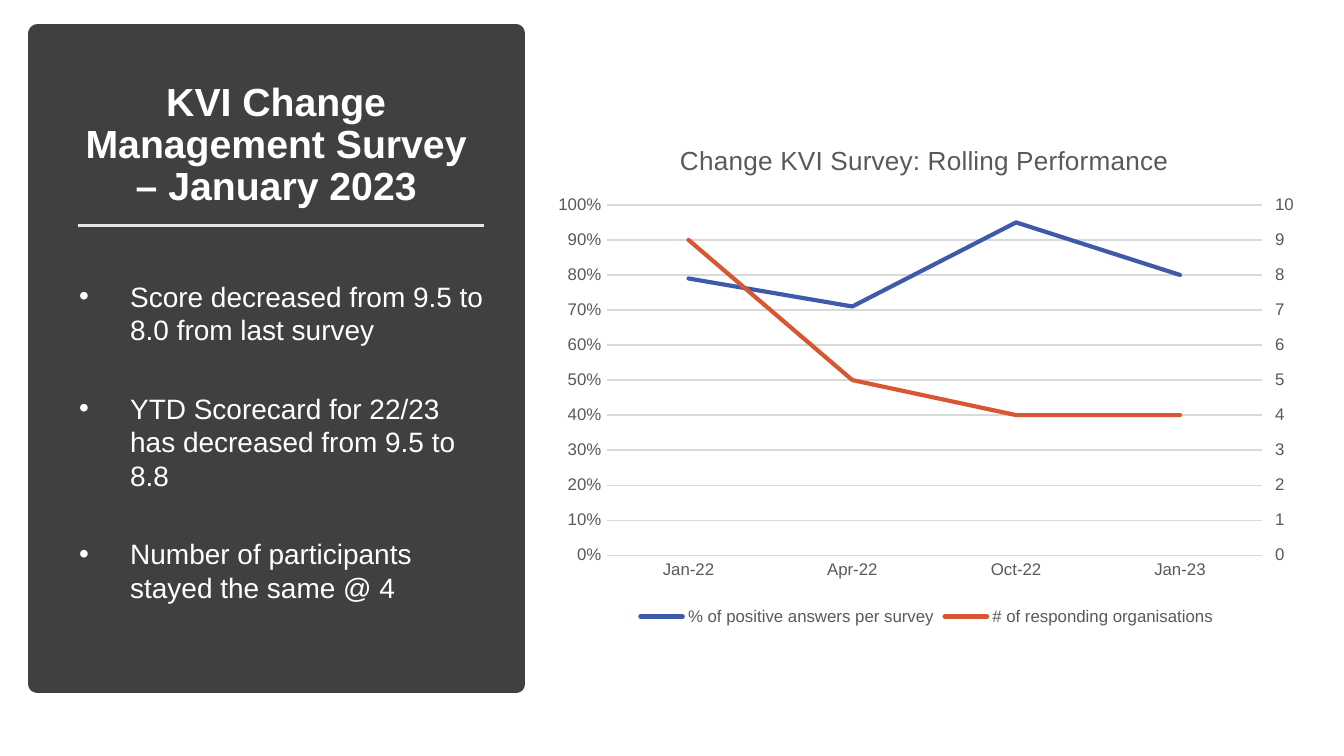
from copy import deepcopy
from lxml.etree import SubElement
from pptx import Presentation
from pptx.chart.data import CategoryChartData
from pptx.dml.color import RGBColor
from pptx.enum.chart import XL_CHART_TYPE as ChartType, XL_LEGEND_POSITION as LegendPos, XL_TICK_MARK as Tick
from pptx.enum.shapes import MSO_CONNECTOR as Connector, MSO_SHAPE as Shape
from pptx.enum.text import MSO_ANCHOR as Anchor, PP_ALIGN as Align
from pptx.oxml import parse_xml
from pptx.oxml.ns import nsdecls, qn
from pptx.util import Inches, Pt

# Content
TITLE = "KVI Change Management Survey – January 2023"
FINDINGS = [
    "Score decreased from 9.5 to 8.0 from last survey",
    "YTD Scorecard for 22/23 has decreased from 9.5 to 8.8",
    "Number of participants stayed the same @ 4",
]
CHART_TITLE = "Change KVI Survey: Rolling Performance"
SURVEYS = ["Jan-22", "Apr-22", "Oct-22", "Jan-23"]
SERIES = [
    ("% of positive answers per survey", [0.79, 0.71, 0.95, 0.8], "positive"),
    ("# of responding organisations", [9, 5, 4, 4], "organisations"),
]

# Style and layout (inches)
FONT = "Arial"
COLORS = {
    "panel": "404040", "light": "FFFFFF", "divider": "E7E6E6", "label": "595959",
    "grid": "D9D9D9", "positive": "3E5AA8", "organisations": "D75733",
}
PANEL = (0.28, 0.25, 3.56, 4.84)
TITLE_BOX = (0.49, 0.53, 3.13, 1.1)
DIVIDER = (0.58, 1.68, 3.6, 1.68)
FINDINGS_BOX = (0.49, 2.03, 3.22, 2.8)
CHART_BOX = (4.06, 0.92, 5.67, 3.78)
BULLET_INDENT = Inches(0.38)


def inches(lengths):
    return [Inches(length) for length in lengths]


def color(name):
    return RGBColor.from_string(COLORS[name])


def set_font(font, size, name, bold=False):
    font.name, font.size, font.bold = FONT, Pt(size), bold
    font.color.rgb = color(name)


def set_line(line, name, width):
    line.color.rgb = color(name)
    line.width = Pt(width)


def set_layout(parent, position, x, y, width=None, height=None, inner=False):
    """Place a chart part by shares of the chart's size."""
    for old in parent.findall(qn("c:layout")):
        parent.remove(old)
    layout = parse_xml(f"<c:layout {nsdecls('c')}/>")
    manual = SubElement(layout, qn("c:manualLayout"))
    entries = [("xMode", "edge"), ("yMode", "edge"), ("x", x), ("y", y), ("w", width), ("h", height)]
    if inner:
        entries.insert(0, ("layoutTarget", "inner"))
    for tag, value in entries:
        if value is not None:
            SubElement(manual, qn(f"c:{tag}")).set("val", str(value))
    parent.insert(position, layout)


deck = Presentation()
deck.slide_width = Inches(10)
deck.slide_height = deck.slide_width * 9 // 16
slide = deck.slides.add_slide(deck.slide_layouts[6])
shapes = slide.shapes

# Dark panel
panel = shapes.add_shape(Shape.RECTANGLE, *inches(PANEL))
panel.shadow.inherit = False
panel.fill.solid()
panel.fill.fore_color.rgb = color("panel")
set_line(panel.line, "panel", 10)

# Title and divider
heading = shapes.add_textbox(*inches(TITLE_BOX)).text_frame
heading.word_wrap = True
heading.vertical_anchor = Anchor.MIDDLE
heading.text = TITLE
heading_line = heading.paragraphs[0]
heading_line.alignment = Align.CENTER
heading_line.line_spacing = Pt(22.5)
set_font(heading_line.font, 21, "light", bold=True)

divider = shapes.add_connector(Connector.STRAIGHT, *inches(DIVIDER))
set_line(divider.line, "divider", 1.75)
SubElement(divider._element.spPr, qn("a:effectLst"))

# Findings
findings = shapes.add_textbox(*inches(FINDINGS_BOX)).text_frame
findings.word_wrap = True
for index, finding in enumerate(FINDINGS):
    paragraph = findings.add_paragraph() if index else findings.paragraphs[0]
    paragraph.text = finding
    paragraph.line_spacing = Pt(18)
    if index:
        paragraph.space_before = Pt(24)
    properties = paragraph._p.get_or_add_pPr()
    properties.set("marL", str(BULLET_INDENT))
    properties.set("indent", str(-BULLET_INDENT))
    SubElement(properties, qn("a:buFont")).set("typeface", FONT)
    SubElement(properties, qn("a:buChar")).set("char", "•")
    set_font(paragraph.font, 15, "light")

# Survey chart
survey_data = CategoryChartData()
survey_data.categories = SURVEYS
for name, values, _ in SERIES:
    survey_data.add_series(name, values)
chart = shapes.add_chart(ChartType.LINE, *inches(CHART_BOX), survey_data).chart
set_font(chart.font, 9, "label")
chart.has_title = True
chart.chart_title.text_frame.text = CHART_TITLE
set_font(chart.chart_title.text_frame.paragraphs[0].font, 14, "label")
chart.chart_title.include_in_layout = False
chart.has_legend = True
chart.legend.position = LegendPos.BOTTOM
chart.legend.include_in_layout = False
set_font(chart.legend.font, 9, "label")

chart.plots[0].vary_by_categories = False
for series, (_, _, tint) in zip(chart.plots[0].series, SERIES):
    series.smooth = False
    set_line(series.format.line, tint, 2.25)
    series._element.spPr.find(qn("a:ln")).set("cap", "rnd")

surveys, share = chart.category_axis, chart.value_axis
for axis in (surveys, share):
    axis.major_tick_mark = axis.minor_tick_mark = Tick.NONE
    set_font(axis.tick_labels.font, 9, "label")
set_line(surveys.format.line, "grid", 0.75)
share.format.line.fill.background()
share.minimum_scale, share.maximum_scale, share.major_unit = 0, 1, 0.1
share.has_major_gridlines = True
set_line(share.major_gridlines.format.line, "grid", 0.75)
share.tick_labels.number_format = "0%"
share.tick_labels.number_format_is_linked = False

# Right axis: second line group with its own pair of axes
percent_lines = chart.plots[0]._element
plot_area = percent_lines.getparent()
count_lines = deepcopy(percent_lines)
percent_lines.remove(percent_lines.findall(qn("c:ser"))[1])
count_lines.remove(count_lines.findall(qn("c:ser"))[0])
percent_lines.addnext(count_lines)
count_surveys, count_axis = deepcopy(surveys._element), deepcopy(share._element)
share._element.addnext(count_axis)
count_axis.addnext(count_surveys)
AXIS_IDS = ("5001", "5002")
for reference, axis_id in zip(count_lines.findall(qn("c:axId")), AXIS_IDS):
    reference.set("val", axis_id)
for axis, own, crossed in ((count_surveys, *AXIS_IDS), (count_axis, *AXIS_IDS[::-1])):
    axis.find(qn("c:axId")).set("val", own)
    axis.find(qn("c:crossAx")).set("val", crossed)
count_surveys.find(qn("c:delete")).set("val", "1")
count_axis.remove(count_axis.find(qn("c:majorGridlines")))
for tag, attribute, value in (
    ("axPos", "val", "r"), ("crosses", "val", "max"), ("majorTickMark", "val", "out"),
    ("majorUnit", "val", "1"), ("numFmt", "formatCode", "General"), ("scaling/c:max", "val", "10"),
):
    node = count_axis.find(f"c:{tag}", {"c": count_axis.nsmap["c"]})
    node.set(attribute, value)

# Places inside the chart
set_layout(chart.chart_title._element, 1, 0.17, 0.03)
set_layout(plot_area, 0, 0.08, 0.16, 0.86, 0.69, inner=True)

deck.save("out.pptx")
